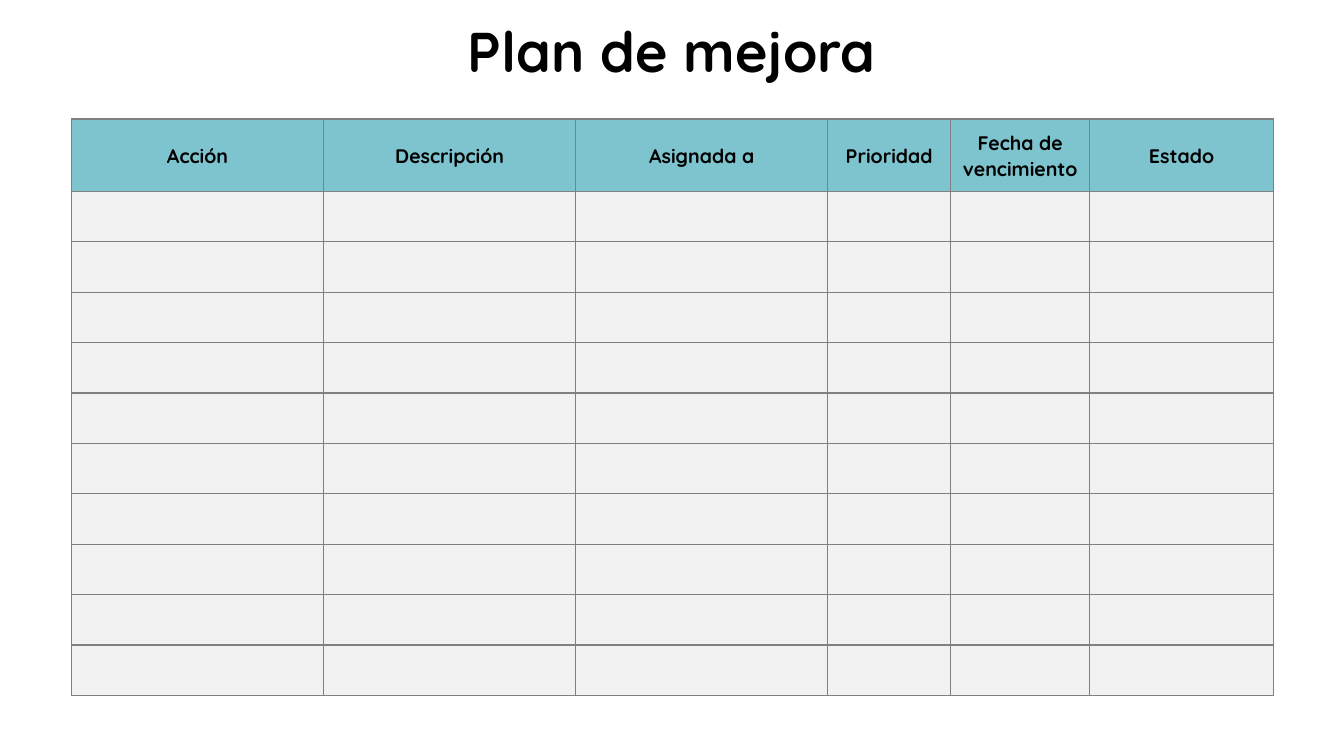
from dataclasses import dataclass
from lxml.etree import SubElement
from pptx import Presentation
from pptx.dml.color import RGBColor
from pptx.enum.text import MSO_ANCHOR, PP_ALIGN
from pptx.oxml.ns import qn
from pptx.util import Inches, Pt


@dataclass(frozen=True)
class Theme:
    font: str = "Quicksand"
    ink: str = "000000"
    head: str = "7EC4CF"
    body: str = "F2F2F2"
    rule: str = "808080"
    title: int = 40
    label: int = 14
    line: int = 1


THEME = Theme()
WIDE, HIGH = Inches(13.33), Inches(7.5)
LEFT, TOP = Inches(0.71), Inches(1.18)
HEAD, ROW, COUNT = Inches(0.72), Inches(0.5), 10
COLS = {
    "Acción": 2.5,
    "Descripción": 2.5,
    "Asignada a": 2.5,
    "Prioridad": 1.22,
    "Fecha de vencimiento": 1.38,
    "Estado": 1.82,
}


def write(frame, text, size, space=1.0, bold=True, color=THEME.ink):
    frame.word_wrap = True
    par = frame.paragraphs[0]
    par.alignment = PP_ALIGN.CENTER
    par.line_spacing = space
    run = par.add_run()
    run.text = text
    font = run.font
    font.name, font.size, font.bold = THEME.font, Pt(size), bold
    font.color.rgb = RGBColor.from_string(color)


def add_title(slide, text):
    width = Inches(5.46)
    box = slide.shapes.add_textbox((WIDE - width) // 2, 0, width, Inches(1.08))
    box.text_frame.vertical_anchor = MSO_ANCHOR.MIDDLE
    write(box.text_frame, text, THEME.title, space=0.9)


def paint(cell, color):
    props = cell._tc.get_or_add_tcPr()
    for side in ("lnL", "lnR", "lnT", "lnB"):
        line = SubElement(props, qn(f"a:{side}"), w=str(Pt(THEME.line)))
        fill = SubElement(line, qn("a:solidFill"))
        SubElement(fill, qn("a:srgbClr"), val=THEME.rule)
    cell.fill.solid()
    cell.fill.fore_color.rgb = RGBColor.from_string(color)


def add_head(cell, text):
    cell.vertical_anchor = MSO_ANCHOR.MIDDLE
    cell.margin_left = cell.margin_right = Inches(0.1)
    cell.margin_top = cell.margin_bottom = Inches(0.1)
    write(cell.text_frame, text, THEME.label, space=1.07)


def add_plan(slide, cols, count):
    width = Inches(sum(cols.values()))
    shape = slide.shapes.add_table(
        count + 1, len(cols), LEFT, TOP, width, HEAD + ROW * count)
    table = shape.table
    table.horz_banding = False
    for col, share in zip(table.columns, cols.values()):
        col.width = Inches(share)
    for index, row in enumerate(table.rows):
        row.height = ROW if index else HEAD
        for cell in row.cells:
            paint(cell, THEME.body if index else THEME.head)
    for cell, text in zip(table.rows[0].cells, cols):
        add_head(cell, text)


def main():
    deck = Presentation()
    deck.slide_width, deck.slide_height = WIDE, HIGH
    slide = deck.slides.add_slide(deck.slide_layouts[6])
    add_title(slide, "Plan de mejora")
    add_plan(slide, COLS, COUNT)
    deck.save("out.pptx")


if __name__ == "__main__":
    main()
